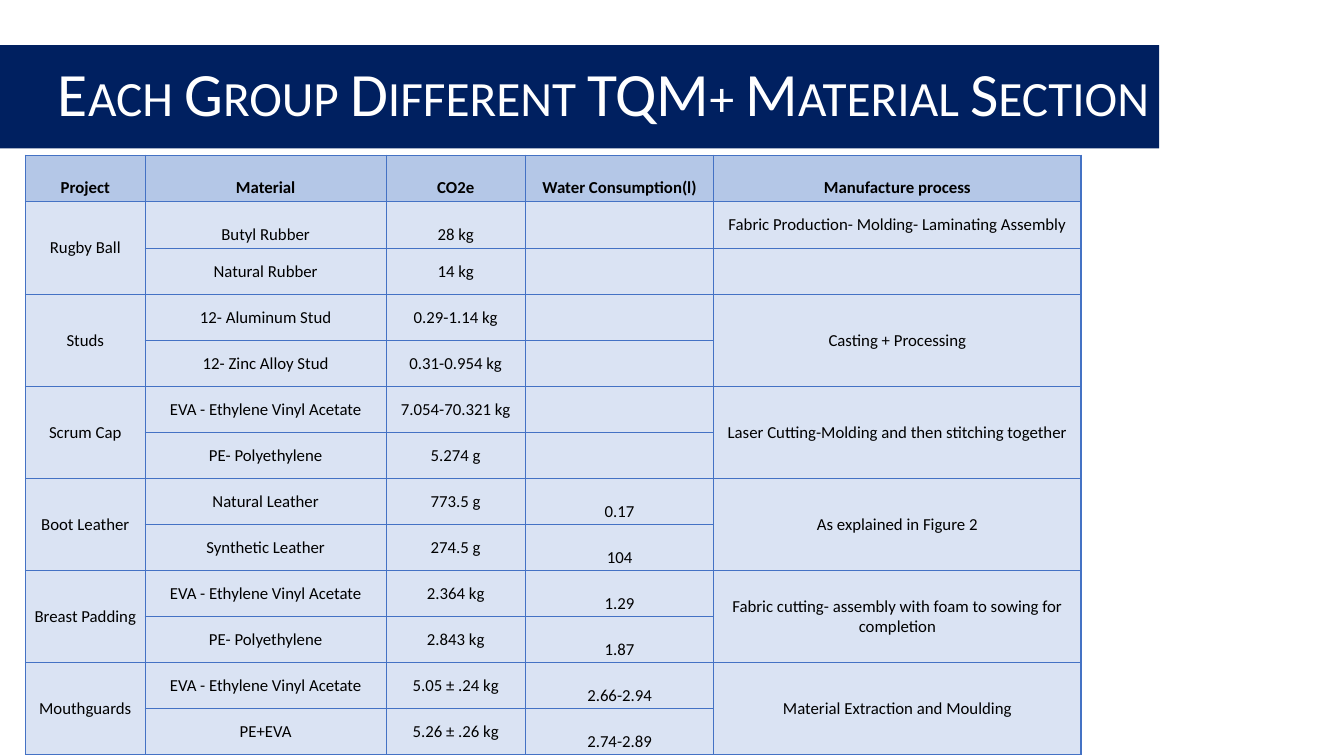
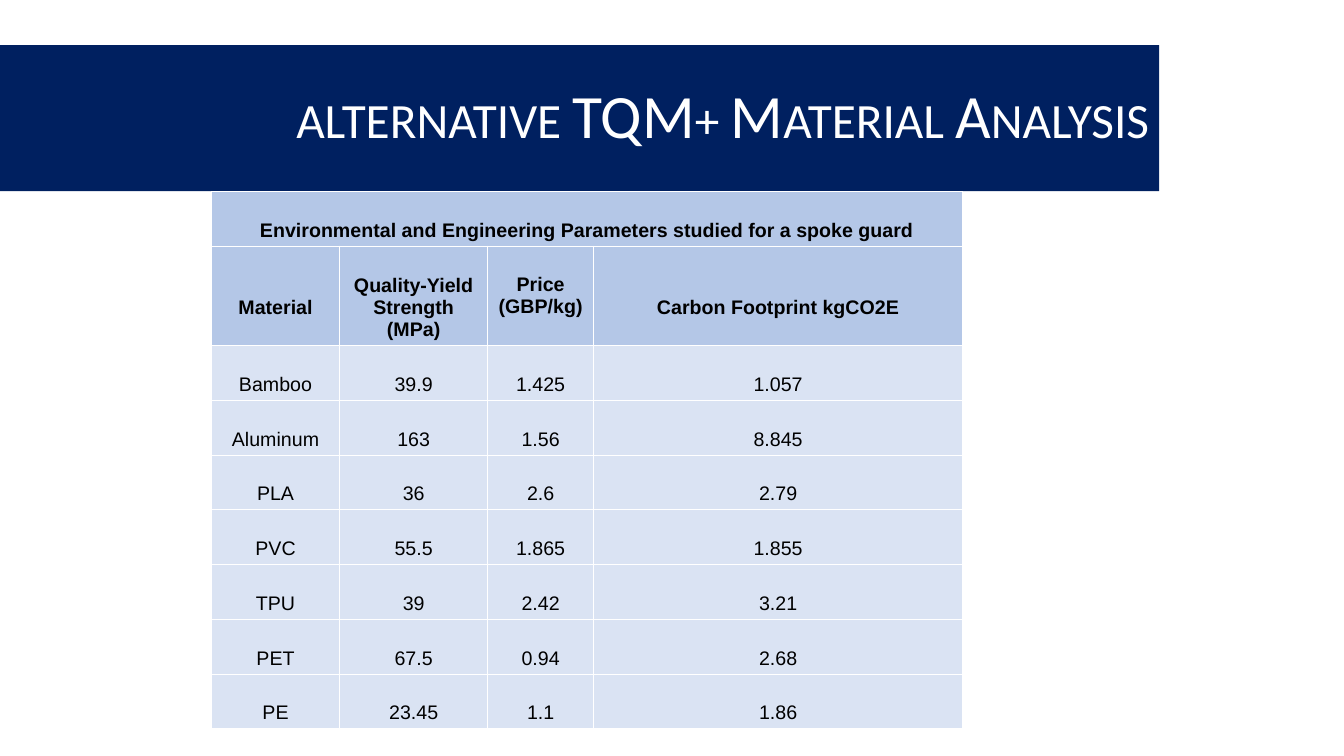
import pptx
import pptx.dml.color
import pptx.enum.shapes
import pptx.enum.text
import pptx.oxml
import pptx.oxml.ns
import pptx.util
from lxml import etree

Cm, Pt = pptx.util.Cm, pptx.util.Pt
RGB = pptx.dml.color.RGBColor.from_string
ALIGN = pptx.enum.text.PP_ALIGN
MIDDLE = pptx.enum.text.MSO_ANCHOR.MIDDLE
qn = pptx.oxml.ns.qn

COLOURS = {
    "band": "002060", "title": "FFFFFF", "text": "000000",
    "head": "B4C7E7", "body": "DAE3F3",
    "blue line": "4472C4", "white line": "FFFFFF",
}
BAND_TOP, BAND_WIDTH = 1.14, 29.21

# In a row, None continues the cell above and "" is an empty cell.
# A row with a single entry spans the whole table.
# "lowered" tells which cells have their text one line below the middle.
SLIDES = [
    {
        "title": "Each Group Different TQM+ Material Section",
        "band height": 2.6,
        "at": (0.64, 3.91),
        "widths": [3.02, 6.07, 3.51, 4.75, 9.25],
        "heights": [1.16, 1.19] + [1.16] * 11,
        "insets": (0.13, 0.05),
        "font": {"name": "Calibri", "size": Pt(12)},
        "border": ("blue line", 1),
        "head rows": 1,
        "lowered": lambda row, col: row == 0 or col == 3 or (row == 1 and col in (1, 2)),
        "rows": [
            ("Project", "Material", "CO2e", "Water Consumption(l)", "Manufacture process"),
            ("Rugby Ball", "Butyl Rubber", "28 kg", "",
             "Fabric Production- Molding- Laminating Assembly"),
            (None, "Natural Rubber", "14 kg", "", ""),
            ("Studs", "12- Aluminum Stud", "0.29-1.14 kg", "", "Casting + Processing"),
            (None, "12- Zinc Alloy Stud", "0.31-0.954 kg", "", None),
            ("Scrum Cap", "EVA - Ethylene Vinyl Acetate", "7.054-70.321 kg", "",
             "Laser Cutting-Molding and then stitching together"),
            (None, "PE- Polyethylene", "5.274 g", "", None),
            ("Boot Leather", "Natural Leather", "773.5 g", "0.17", "As explained in Figure 2"),
            (None, "Synthetic Leather", "274.5 g", "104", None),
            ("Breast Padding", "EVA - Ethylene Vinyl Acetate", "2.364 kg", "1.29",
             "Fabric cutting- assembly with foam to sowing for completion"),
            (None, "PE- Polyethylene", "2.843 kg", "1.87", None),
            ("Mouthguards", "EVA - Ethylene Vinyl Acetate", "5.05 ± .24 kg", "2.66-2.94",
             "Material Extraction and Moulding"),
            (None, "PE+EVA", "5.26 ± .26 kg", "2.74-2.89", None),
        ],
    },
    {
        "title": "alternative TQM+ Material Analysis",
        "band height": 3.68,
        "at": (5.33, 4.83),
        "widths": [3.23, 3.73, 2.67, 9.3],
        "heights": [1.37, 2.51] + [1.38] * 7,
        "insets": (0.2, 0.1),
        "font": {"name": "Arial", "size": Pt(14)},
        "border": ("white line", 0.75),
        "head rows": 2,
        "lowered": lambda row, col: (row, col) != (1, 2),
        "rows": [
            ("Environmental and Engineering Parameters studied for a spoke guard",),
            ("Material", "Quality-Yield Strength (MPa)", "Price (GBP/kg)",
             "Carbon Footprint kgCO2E"),
            ("Bamboo", "39.9", "1.425", "1.057"),
            ("Aluminum", "163", "1.56", "8.845"),
            ("PLA", "36", "2.6", "2.79"),
            ("PVC", "55.5", "1.865", "1.855"),
            ("TPU", "39", "2.42", "3.21"),
            ("PET", "67.5", "0.94", "2.68"),
            ("PE", "23.45", "1.1", "1.86"),
        ],
    },
]


def set_attrs(target, values):
    for name, value in values.items():
        setattr(target, name, value)


def fill(target, colour):
    target.fill.solid()
    target.fill.fore_color.rgb = RGB(COLOURS[colour])


def add_title(s, text, height):
    sp = s.shapes.add_shape(pptx.enum.shapes.MSO_SHAPE.RECTANGLE,
                            0, Cm(BAND_TOP), Cm(BAND_WIDTH), Cm(height))
    sp.shadow.inherit = False
    sp.line.fill.background()
    fill(sp, "band")
    set_attrs(sp.text_frame, {"word_wrap": True, "vertical_anchor": MIDDLE})
    p = sp.text_frame.paragraphs[0]
    set_attrs(p, {"alignment": ALIGN.RIGHT, "line_spacing": 0.9})
    r = p.add_run()
    r.text = text
    set_attrs(r.font, {"name": "Calibri", "size": Pt(44)})
    r.font.color.rgb = RGB(COLOURS["title"])
    r._r.get_or_add_rPr().set("cap", "small")


def add_borders(cell, colour, width):
    tcPr = cell._tc.get_or_add_tcPr()
    for i, side in enumerate(("lnL", "lnR", "lnT", "lnB")):
        ln = etree.Element(qn("a:" + side), w=str(Pt(width)))
        solid = etree.SubElement(ln, qn("a:solidFill"))
        etree.SubElement(solid, qn("a:srgbClr"), val=COLOURS[colour])
        tcPr.insert(i, ln)


def format_cell(cell, spec_, head, lowered):
    side, edge = (Cm(v) for v in spec_["insets"])
    line = int(spec_["font"]["size"] * 1.2)
    set_attrs(cell, {
        "vertical_anchor": MIDDLE, "margin_left": side, "margin_right": side,
        "margin_top": edge + (line if lowered else 0), "margin_bottom": edge,
    })
    fill(cell, "head" if head else "body")
    add_borders(cell, *spec_["border"])
    p = cell.text_frame.paragraphs[0]
    p.alignment = ALIGN.CENTER
    set_attrs(p.font, {**spec_["font"], "bold": head})
    for r in p.runs:
        set_attrs(r.font, {**spec_["font"], "bold": head})
        r.font.color.rgb = RGB(COLOURS["text"])


def add_grid(s, data):
    rows, widths, heights = data["rows"], data["widths"], data["heights"]
    left, top = data["at"]
    table = s.shapes.add_table(len(rows), len(widths), Cm(left), Cm(top),
                               Cm(sum(widths)), Cm(sum(heights))).table
    set_attrs(table, {"first_row": False, "horz_banding": False})
    for column, width in zip(table.columns, widths):
        column.width = Cm(width)
    for row, height in zip(table.rows, heights):
        row.height = Cm(height)

    for i, row in enumerate(rows):
        for j, text in enumerate(row):
            if text:
                table.cell(i, j).text = text
            elif text is None:
                table.cell(i - 1, j).merge(table.cell(i, j))
        if len(row) == 1:
            table.cell(i, 0).merge(table.cell(i, len(widths) - 1))
        for j in range(len(widths)):
            format_cell(table.cell(i, j), data, i < data["head rows"],
                        data["lowered"](i, j))


def main():
    prs = pptx.Presentation()
    set_attrs(prs, {"slide_width": Cm(33.87), "slide_height": Cm(19.05)})
    for data in SLIDES:
        s = prs.slides.add_slide(prs.slide_layouts[6])
        add_title(s, data["title"], data["band height"])
        add_grid(s, data)
    prs.save("out.pptx")


if __name__ == "__main__":
    main()
